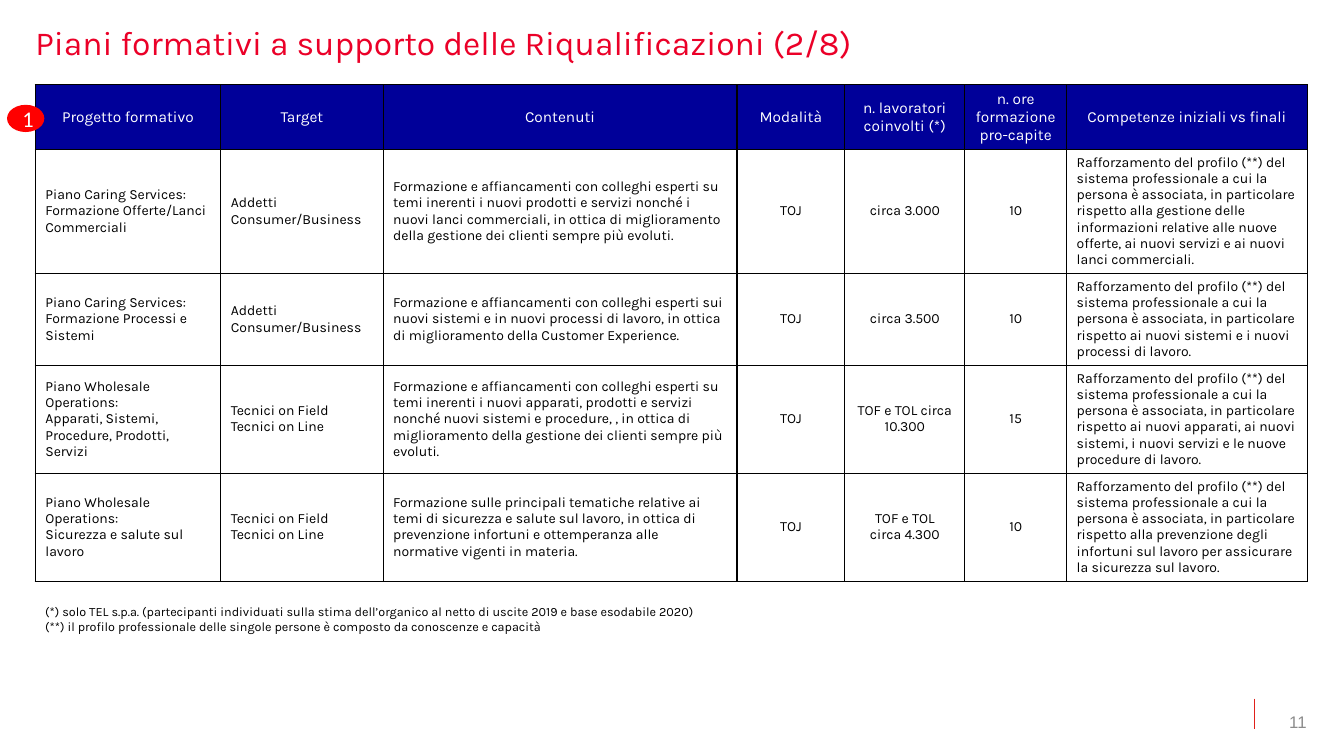
import pptx
import pptx.util
import pptx.dml.color
import pptx.enum.shapes
import pptx.enum.text
import pptx.oxml
import pptx.oxml.ns
from lxml import etree

# Content
TITLE = "Piani formativi a supporto delle Riqualificazioni (2/8)"
HEADS = ["Progetto formativo", "Target", "Contenuti", "Modalità",
         "n. lavoratori coinvolti (*)", "n. ore formazione\npro-capite",
         "Competenze iniziali vs finali"]
CARE, WHOLE = "Piano Caring Services:\n", "Piano Wholesale Operations:\n"
STAFF = "Addetti Consumer/Business"
TECHS = "Tecnici on Field\nTecnici on Line"
COACH = "Formazione e affiancamenti con colleghi esperti "
SKILL = ("Rafforzamento del profilo (**) del sistema professionale a cui la "
         "persona è associata, in particolare rispetto ")
PLANS = [
    (CARE + "Formazione Offerte/Lanci Commerciali", STAFF,
     COACH + "su temi inerenti i nuovi prodotti e servizi nonché i nuovi lanci "
     "commerciali, in ottica di miglioramento della gestione dei clienti "
     "sempre più evoluti.",
     "TOJ", "circa 3.000", "10",
     SKILL + "alla gestione delle informazioni relative alle nuove offerte, "
     "ai nuovi servizi e ai nuovi lanci commerciali."),
    (CARE + "Formazione Processi e Sistemi", STAFF,
     COACH + "sui nuovi sistemi e in nuovi processi di lavoro, in ottica di "
     "miglioramento della Customer Experience.",
     "TOJ", "circa 3.500", "10",
     SKILL + "ai nuovi sistemi e i nuovi processi di lavoro."),
    (WHOLE + "Apparati, Sistemi, Procedure, Prodotti, Servizi", TECHS,
     COACH + "su temi inerenti i nuovi apparati, prodotti e servizi nonché "
     "nuovi sistemi e procedure, , in ottica di miglioramento della gestione "
     "dei clienti sempre più evoluti.",
     "TOJ", "TOF e TOL circa 10.300", "15",
     SKILL + "ai nuovi apparati, ai nuovi sistemi, i nuovi servizi e le nuove "
     "procedure di lavoro."),
    (WHOLE + "Sicurezza e salute sul lavoro", TECHS,
     "Formazione sulle principali tematiche relative ai temi di sicurezza e "
     "salute sul lavoro, in ottica di prevenzione infortuni e ottemperanza "
     "alle normative vigenti in materia.",
     "TOJ", "TOF e TOL\ncirca 4.300", "10",
     SKILL + "alla prevenzione degli infortuni sul lavoro per assicurare la "
     "sicurezza sul lavoro."),
]
NOTES = ("(*) solo TEL s.p.a. (partecipanti individuati sulla stima dell’organico "
         "al netto di uscite 2019 e base esodabile 2020)\n"
         "(**) il profilo professionale delle singole persone è composto da "
         "conoscenze e capacità")

# Grid and colours
COLS = [1.84, 1.61, 3.51, 1.07, 1.19, 1.01, 2.39]
ROWS = [0.64, 1.23, 0.91, 1.07, 1.07]
MID = {3, 4, 5}
LEFT, TOP, WIDE = 0.35, 0.84, sum(COLS)
HUES = {"title": "EB0028", "head": "000099", "body": "FFFFFF", "ink": "000000",
        "badge": "FF0000", "rule": "E0201A", "page": "8C8C8C"}
ALIGN = pptx.enum.text.PP_ALIGN
MIDDLE = pptx.enum.text.MSO_ANCHOR.MIDDLE
inch = pptx.util.Inches


def hue(name):
    return pptx.dml.color.RGBColor.from_string(HUES[name])


def box(*sides):
    return [inch(side) for side in sides]


def write(frame, text, size, color, align=ALIGN.LEFT, face="Karla"):
    frame.text = text
    for para in frame.paragraphs:
        para.alignment = align
        para.font.name = face
        para.font.size = pptx.util.Pt(size)
        para.font.color.rgb = hue(color)


def trim(frame):
    frame.margin_left = frame.margin_right = 0
    frame.margin_top = frame.margin_bottom = 0


def edge(cell):
    props = cell._tc.get_or_add_tcPr()
    for spot, side in enumerate("LRTB"):
        props.insert(spot, pptx.oxml.parse_xml(
            f'<a:ln{side} {pptx.oxml.ns.nsdecls("a")} w="12700"><a:solidFill>'
            f'<a:srgbClr val="{HUES["ink"]}"/></a:solidFill></a:ln{side}>'))


deck = pptx.Presentation()
deck.slide_width, deck.slide_height = box(13.33, 7.5)
slide = deck.slides.add_slide(deck.slide_layouts[5])
shapes = slide.shapes

# Title
title = shapes.title
title.left, title.top, title.width, title.height = box(LEFT, 0.26, WIDE, 0.5)
frame = title.text_frame
write(frame, TITLE, 24, "title")
trim(frame)
frame.vertical_anchor = pptx.enum.text.MSO_ANCHOR.TOP
frame.auto_size = pptx.enum.text.MSO_AUTO_SIZE.NONE
frame.paragraphs[0].line_spacing = 0.9

# Table of training plans
grid = shapes.add_table(len(ROWS), len(COLS),
                        *box(LEFT, TOP, WIDE, sum(ROWS))).table
for col, width in zip(grid.columns, COLS):
    col.width = inch(width)
for r, (height, texts) in enumerate(zip(ROWS, [HEADS] + PLANS)):
    grid.rows[r].height = inch(height)
    for c, text in enumerate(texts):
        cell = grid.cell(r, c)
        head = r == 0
        write(cell.text_frame, text, 11 if head else 10,
              "body" if head else "ink",
              ALIGN.CENTER if head or c in MID else ALIGN.LEFT)
        cell.vertical_anchor = MIDDLE
        cell.fill.solid()
        cell.fill.fore_color.rgb = hue("head" if head else "body")
        edge(cell)

# Footnotes
notes = shapes.add_textbox(*box(LEFT, 5.94, 6.64, 0.4)).text_frame
notes.word_wrap = False
write(notes, NOTES, 9, "ink")

# Numbered badge
badge = shapes.add_shape(pptx.enum.shapes.MSO_SHAPE.OVAL,
                         *box(0.07, 1.04, 0.37, 0.27))
badge.shadow.inherit = False
badge.fill.solid()
badge.fill.fore_color.rgb = hue("badge")
badge.line.fill.background()
write(badge.text_frame, "1", 16, "body", ALIGN.CENTER, "Calibri")
badge.text_frame.vertical_anchor = MIDDLE

# Page number and its rule
rule = shapes.add_connector(pptx.enum.shapes.MSO_CONNECTOR.STRAIGHT,
                            *box(12.44, 6.93, 12.44, 7.23))
rule.line.color.rgb = hue("rule")
rule.line.width = pptx.util.Pt(1)
etree.SubElement(rule._element.spPr, pptx.oxml.ns.qn("a:effectLst"))
page = shapes.add_textbox(*box(12.73, 7.06, 0.23, 0.2)).text_frame
trim(page)
page.word_wrap = False
page.vertical_anchor = MIDDLE
write(page, "11", 12, "page", ALIGN.RIGHT, "Arial")

deck.save("out.pptx")
